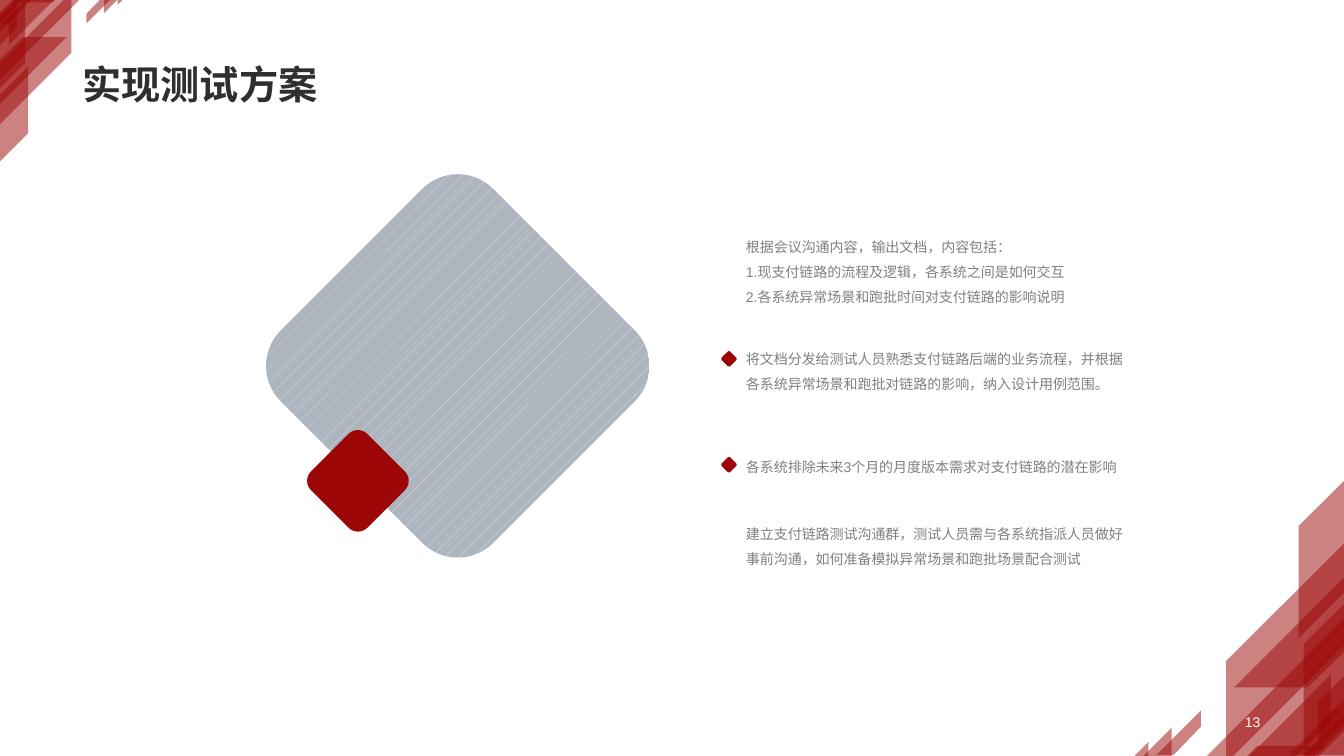
from lxml.etree import SubElement
from pptx import Presentation
from pptx.dml.color import RGBColor
from pptx.enum.dml import MSO_PATTERN
from pptx.enum.shapes import MSO_SHAPE
from pptx.enum.text import MSO_ANCHOR, MSO_AUTO_SIZE, PP_ALIGN
from pptx.oxml.ns import qn
from pptx.util import Inches, Pt

RED = "9C0606"
CORNER_SCALE = 0.595
CORNER_ORIGIN = (13.35, 7.44)

SHARDS = [
    [(13.35, 7.07), (12.93, 7.49), (13.35, 7.49)],
    [(13.35, 6.69), (13.07, 6.97), (13.07, 7.47), (13.35, 7.19)],
    [(13.23, 7.04), (13.11, 7.16), (13.11, 7.23), (13.3, 7.04)],
    [(13.35, 4.75), (12.88, 5.22), (12.88, 6.33), (13.35, 5.86)],
    [(13.35, 5.37), (12.16, 6.56), (12.16, 7.57), (13.35, 6.38)],
    [(13.35, 5.71), (12.24, 6.82), (12.97, 6.82), (13.35, 6.45)],
    [(12.87, 7.71), (13.35, 7.23), (13.35, 6.12), (11.76, 7.71)],
    [(11.64, 7.49), (11.91, 7.21), (11.91, 7.05), (11.47, 7.49)],
    [(13.18, 7.71), (13.35, 7.54), (13.35, 5.97), (12.93, 6.39), (12.93, 7.71)],
    [(12.83, 7.71), (13.14, 7.4), (12.47, 7.4), (12.16, 7.71)],
    [(11.62, 7.71), (11.62, 7.22), (11.13, 7.71)],
    [(13.35, 6.92), (12.78, 7.49), (12.99, 7.49), (13.35, 7.13)],
    [(12.64, 7.71), (13.2, 7.16), (13.2, 6.69), (12.18, 7.71)],
    [(11.22, 7.78), (11.39, 7.61), (11.39, 7.36), (10.97, 7.78)],
]

DIAMONDS = [
    (4.54, 3.63, 2.98),
    (3.55, 4.77, 0.79),
    (7.23, 3.56, 0.12),
    (7.23, 4.61, 0.12),
]

NOTES = [
    (2.23, 0.83, ["根据会议沟通内容，输出文档，内容包括：",
                  "1.现支付链路的流程及逻辑，各系统之间是如何交互",
                  "2.各系统异常场景和跑批时间对支付链路的影响说明"]),
    (3.34, 0.58, ["将文档分发给测试人员熟悉支付链路后端的业务流程，并根据各系统异常场景和跑批对链路的影响，纳入设计用例范围。"]),
    (4.42, 0.32, ["各系统排除未来3个月的月度版本需求对支付链路的潜在影响"]),
    (5.08, 0.58, ["建立支付链路测试沟通群，测试人员需与各系统指派人员做好事前沟通，如何准备模拟异常场景和跑批场景配合测试"]),
]


def rgb(value):
    return RGBColor.from_string(value)


def paint(sp, color):
    sp.shadow.inherit = False
    sp.line.fill.background()
    sp.fill.solid()
    sp.fill.fore_color.rgb = rgb(color)


def add_shard(slide, points):
    emu = [(Inches(x), Inches(y)) for x, y in points]
    builder = slide.shapes.build_freeform(*emu[0])
    builder.add_line_segments(emu[1:], close=True)
    sp = builder.convert_to_shape()
    paint(sp, RED)
    color = sp.fill._xPr.find(qn("a:solidFill"))[0]
    SubElement(color, qn("a:alpha")).set("val", "50000")


def add_diamond(slide, cx, cy, side):
    sp = slide.shapes.add_shape(
        MSO_SHAPE.ROUNDED_RECTANGLE, Inches(cx - side / 2), Inches(cy - side / 2),
        Inches(side), Inches(side))
    sp.rotation = 45
    paint(sp, RED)
    return sp


def add_text(slide, box, lines, size, color, spacing=1.0, bold=False,
             align=PP_ALIGN.LEFT, anchor=MSO_ANCHOR.TOP):
    tf = slide.shapes.add_textbox(*[Inches(v) for v in box]).text_frame
    tf.word_wrap = True
    tf.vertical_anchor = anchor
    tf.text = "\n".join(lines)
    for p in tf.paragraphs:
        p.alignment = align
        p.line_spacing = spacing
        for r in p.runs:
            r.font.name = "Arial"
            r.font.size = Pt(size)
            r.font.bold = bold
            r.font.color.rgb = rgb(color)
    return tf


def main():
    prs = Presentation()
    prs.slide_width, prs.slide_height = Inches(13.33), Inches(7.5)
    slide = prs.slides.add_slide(prs.slide_layouts[6])

    for points in SHARDS:
        add_shard(slide, points)
    ox, oy = CORNER_ORIGIN
    for points in SHARDS:
        add_shard(slide, [((ox - x) * CORNER_SCALE, (oy - y) * CORNER_SCALE)
                          for x, y in points])

    add_text(slide, (9.69, 7.04, 2.91, 0.24), ["13"], 10, "FFFFFF",
             align=PP_ALIGN.RIGHT, anchor=MSO_ANCHOR.MIDDLE)
    add_text(slide, (0.72, 0, 11.88, 1.12), ["实现测试方案"], 28, "2F2F2F",
             spacing=0.9, bold=True, anchor=MSO_ANCHOR.BOTTOM)

    large, *_ = [add_diamond(slide, *diamond) for diamond in DIAMONDS]
    large.fill.patterned()
    large.fill.pattern = MSO_PATTERN.PERCENT_5
    large.fill.fore_color.rgb = rgb("E4E6EA")
    large.fill.back_color.rgb = rgb("ADB5BF")

    for top, height, lines in NOTES:
        tf = add_text(slide, (7.3, top, 3.98, height), lines, 10, "808080", spacing=1.5)
        tf.auto_size = MSO_AUTO_SIZE.SHAPE_TO_FIT_TEXT

    prs.save("out.pptx")


if __name__ == "__main__":
    main()
